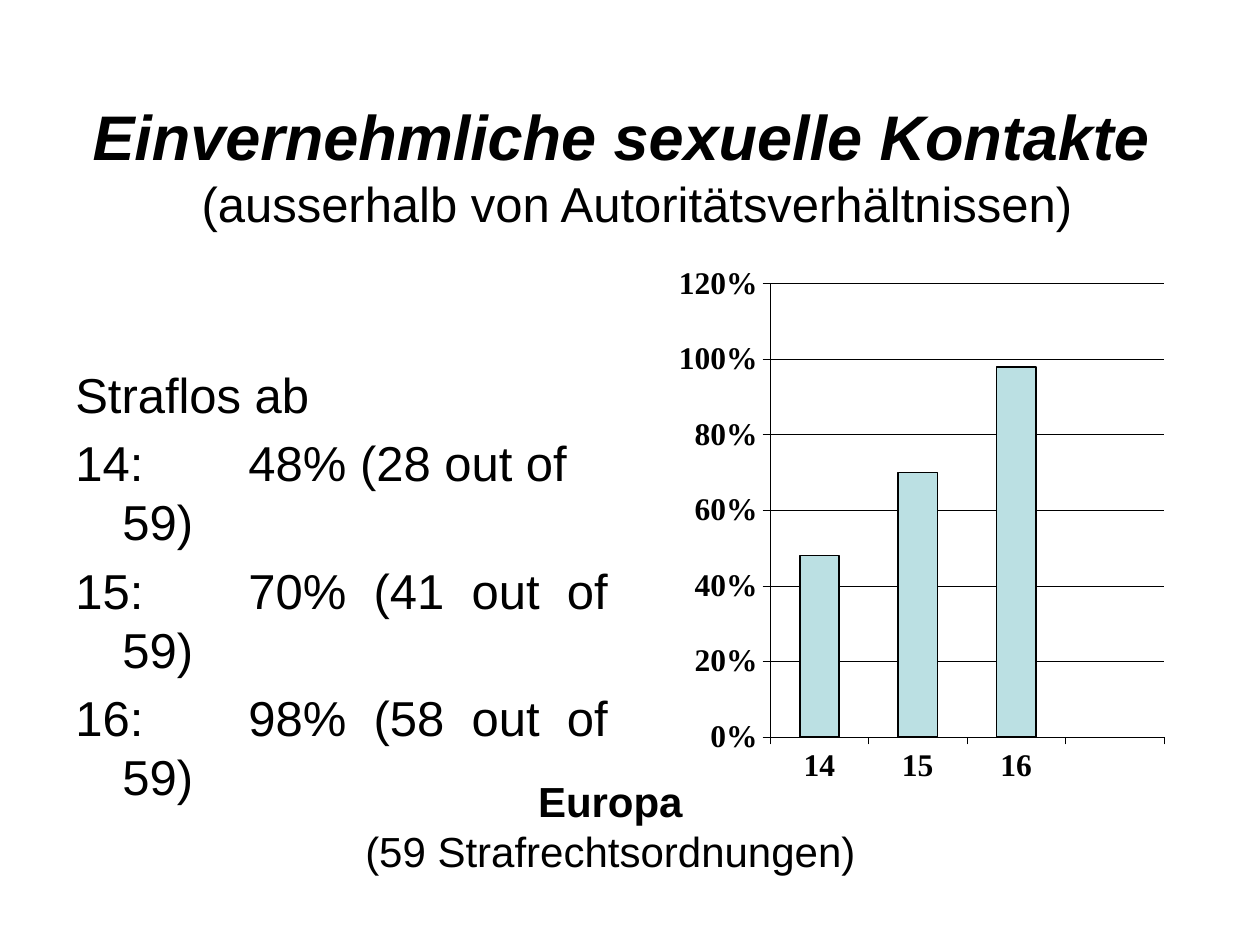
from pptx import Presentation
from pptx.chart.data import CategoryChartData
from pptx.dml.color import RGBColor
from pptx.enum.chart import XL_CHART_TYPE as ChartType, XL_TICK_LABEL_POSITION as LabelPosition
from pptx.enum.chart import XL_TICK_MARK as TickMark
from pptx.enum.text import MSO_ANCHOR as Anchor, PP_ALIGN as Align
from pptx.oxml import parse_xml
from pptx.oxml.ns import nsdecls
from pptx.util import Cm, Pt

COLORS = {"ink": "000000", "bar": "BBE0E3"}
TEXT_FONT, CHART_FONT = "Arial", "Times New Roman"


def color(name):
    return RGBColor.from_string(COLORS[name])


def style_font(font, name, size, bold=False, italic=False):
    font.name, font.size = name, Pt(size)
    font.bold, font.italic = bold, italic
    font.color.rgb = color("ink")


def style_line(line, width):
    line.color.rgb = color("ink")
    line.width = Pt(width)


def add_run(paragraph, text, size, bold=False, italic=False):
    run = paragraph.add_run()
    run.text = text
    style_font(run.font, TEXT_FONT, size, bold, italic)


def add_text_frame(slide, box, anchor=Anchor.TOP):
    frame = slide.shapes.add_textbox(*box).text_frame
    frame.word_wrap = True
    frame.vertical_anchor = anchor
    return frame


def add_title(slide, box):
    paragraph = add_text_frame(slide, box, Anchor.MIDDLE).paragraphs[0]
    paragraph.alignment = Align.CENTER
    add_run(paragraph, "Einvernehmliche sexuelle Kontakte ", 36, bold=True, italic=True)
    paragraph.add_line_break()
    add_run(paragraph, " (ausserhalb von Autoritätsverhältnissen)", 28)


def add_age_list(slide, box):
    lines = [
        ("Straflos ab", Align.LEFT),
        ("14: \t48% (28 out of 59)", Align.LEFT),
        ("15:\t70% (41 out of 59)", Align.JUSTIFY),
        ("16:\t98% (58 out of 59)", Align.JUSTIFY),
    ]
    frame = add_text_frame(slide, box)
    for index, (text, alignment) in enumerate(lines):
        paragraph = frame.add_paragraph() if index else frame.paragraphs[0]
        paragraph.alignment = alignment
        paragraph.space_before = Pt(5.6 if index else 0)
        # Hanging indent and tab width
        properties = paragraph._p.get_or_add_pPr()
        properties.set("marL", str(Cm(0.95)))
        properties.set("indent", str(-Cm(0.95)))
        properties.set("defTabSz", str(Cm(2.54)))
        add_run(paragraph, text, 28)


def add_age_chart(slide, box):
    data = CategoryChartData(number_format="0%")
    data.categories = ["14", "15", "16", ""]
    data.add_series("Series 1", [0.48, 0.7, 0.98, None])
    chart = slide.shapes.add_chart(ChartType.COLUMN_CLUSTERED, *box, data).chart
    chart.has_legend = chart.has_title = False
    style_font(chart.font, CHART_FONT, 18, bold=True)

    # Columns
    plot = chart.plots[0]
    plot.gap_width = 150
    plot.vary_by_categories = False
    bars = plot.series[0].format
    bars.fill.solid()
    bars.fill.fore_color.rgb = color("bar")
    style_line(bars.line, 1)

    # Axes
    for axis in (chart.category_axis, chart.value_axis):
        axis.major_tick_mark, axis.minor_tick_mark = TickMark.OUTSIDE, TickMark.NONE
        style_font(axis.tick_labels.font, CHART_FONT, 18, bold=True)
        style_line(axis.format.line, 0.25)
    chart.category_axis.tick_label_position = LabelPosition.LOW
    values = chart.value_axis
    values.minimum_scale, values.maximum_scale, values.major_unit = 0, 1.2, 0.2
    values.tick_labels.number_format = "0%"
    values.tick_labels.number_format_is_linked = False
    style_line(values.major_gridlines.format.line, 0.25)

    # Inner plot area as shares of the chart
    shares = {"x": 0.21, "y": 0.05, "w": 0.77, "h": 0.82}
    modes = "".join(f'<c:{side}Mode val="edge"/>' for side in "xy")
    places = "".join(f'<c:{side} val="{share}"/>' for side, share in shares.items())
    layout = parse_xml(
        f'<c:layout {nsdecls("c")}><c:manualLayout><c:layoutTarget val="inner"/>'
        f"{modes}{places}</c:manualLayout></c:layout>"
    )
    area = chart._chartSpace.chart.plotArea
    for old_layout in area.findall(layout.tag):
        area.remove(old_layout)
    area.insert(0, layout)


def add_caption(slide, box):
    frame = add_text_frame(slide, box)
    for index, (text, bold) in enumerate([("Europa", True), ("(59 Strafrechtsordnungen)", False)]):
        paragraph = frame.add_paragraph() if index else frame.paragraphs[0]
        paragraph.alignment = Align.CENTER
        add_run(paragraph, text, 24, bold)


def main():
    presentation = Presentation()
    presentation.slide_width, presentation.slide_height = Cm(25.4), Cm(19.05)
    slide = presentation.slides.add_slide(presentation.slide_layouts[6])
    add_title(slide, (Cm(1.27), Cm(1.33), Cm(22.86), Cm(3.99)))
    add_age_list(slide, (Cm(1.27), Cm(7.22), Cm(11.23), Cm(9.7)))
    add_age_chart(slide, (Cm(13.36), Cm(5.16), Cm(10.31), Cm(11.15)))
    add_caption(slide, (Cm(6.5), Cm(15.5), Cm(11.61), Cm(2.29)))
    presentation.save("out.pptx")


if __name__ == "__main__":
    main()
